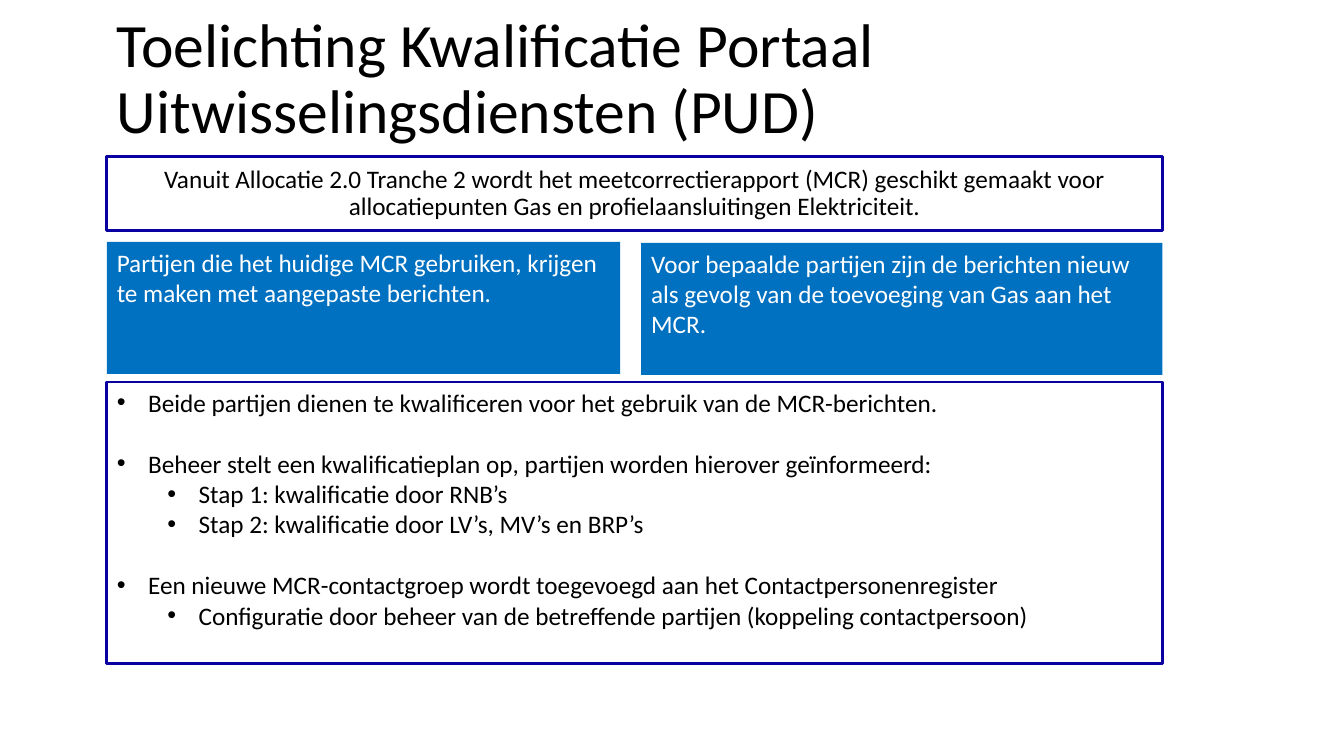
from lxml import etree
from pptx import Presentation
from pptx.dml.color import RGBColor
from pptx.enum import shapes, text
from pptx.oxml import ns
from pptx.util import Inches, Pt

LEFT, WIDTH = 1.06, 10.47
NAVY, BLUE, WHITE, BLACK = "0A00A2", "0070C0", "FFFFFF", "000000"
INDENT = 0.31


def style_box(shape, left, top, width, height, fill=None, line=None):
    shape.left, shape.top, shape.width, shape.height = map(Inches, (left, top, width, height))
    if fill:
        shape.fill.solid()
        shape.fill.fore_color.rgb = RGBColor.from_string(fill)
    if line:
        shape.line.color.rgb = RGBColor.from_string(line)
        shape.line.width = Pt(2)
    else:
        shape.line.fill.background()


def write(frame, content, size=18, color=BLACK, align=text.PP_ALIGN.LEFT,
          anchor=text.MSO_ANCHOR.TOP, spacing=1.0, before=0, level=0, bullet=False):
    frame.word_wrap = True
    frame.auto_size = text.MSO_AUTO_SIZE.NONE
    frame.vertical_anchor = anchor
    paragraph = frame.paragraphs[0] if not frame.text else frame.add_paragraph()
    paragraph.text = content
    paragraph.level = level
    paragraph.alignment = align
    paragraph.line_spacing = spacing
    paragraph.space_before = Pt(before)
    if bullet:
        properties = paragraph._p.get_or_add_pPr()
        properties.set("marL", str(Inches(INDENT + 0.5 * level)))
        properties.set("indent", str(-Inches(INDENT)))
        etree.SubElement(properties, ns.qn("a:buFont")).set("typeface", "Arial")
        etree.SubElement(properties, ns.qn("a:buChar")).set("char", "•")
    for run in paragraph.runs:
        run.font.name = "Calibri"
        run.font.size = Pt(size)
        run.font.color.rgb = RGBColor.from_string(color)


presentation = Presentation()
presentation.slide_width, presentation.slide_height = Inches(13.33), Inches(7.5)
slide = presentation.slides.add_slide(presentation.slide_layouts[1])

title = slide.shapes.title
style_box(title, LEFT, 0.41, WIDTH, 1.45)
title.text_frame.margin_bottom = Inches(0.72)
write(title.text_frame, "Toelichting Kwalificatie Portaal Uitwisselingsdiensten (PUD)",
      size=44, anchor=text.MSO_ANCHOR.MIDDLE, spacing=0.9)

steps = slide.placeholders[1]
style_box(steps, LEFT, 3.79, WIDTH, 2.79, WHITE, NAVY)
for content, level, before in [
    ("Beide partijen dienen te kwalificeren voor het gebruik van de MCR-berichten.", 0, 0),
    ("Beheer stelt een kwalificatieplan op, partijen worden hierover geïnformeerd:", 0, 22),
    ("Stap 1: kwalificatie door RNB’s", 1, 0),
    ("Stap 2: kwalificatie door LV’s, MV’s en BRP’s", 1, 0),
    ("Een nieuwe MCR-contactgroep wordt toegevoegd aan het Contactpersonenregister", 0, 22),
    ("Configuratie door beheer van de betreffende partijen (koppeling contactpersoon)", 1, 0),
]:
    write(steps.text_frame, content, level=level, before=before, bullet=True)

centred = dict(align=text.PP_ALIGN.CENTER, anchor=text.MSO_ANCHOR.MIDDLE, spacing=0.9)
for content, bounds, fill, line, formatting in [
    ("Vanuit Allocatie 2.0 Tranche 2 wordt het meetcorrectierapport (MCR) geschikt gemaakt "
     "voor allocatiepunten Gas en profielaansluitingen Elektriciteit.",
     (LEFT, 1.55, WIDTH, 0.74), WHITE, NAVY, centred),
    ("Partijen die het huidige MCR gebruiken, krijgen te maken met aangepaste berichten.",
     (LEFT, 2.4, 5.09, 1.31), BLUE, None, dict(color=WHITE)),
    ("Voor bepaalde partijen zijn de berichten nieuw als gevolg van de toevoeging van Gas "
     "aan het MCR.",
     (6.36, 2.41, 5.17, 1.31), BLUE, None, dict(color=WHITE)),
]:
    shape = slide.shapes.add_shape(shapes.MSO_SHAPE.RECTANGLE, *map(Inches, bounds))
    shape.shadow.inherit = False
    style_box(shape, *bounds, fill, line)
    write(shape.text_frame, content, **formatting)

presentation.save("out.pptx")
